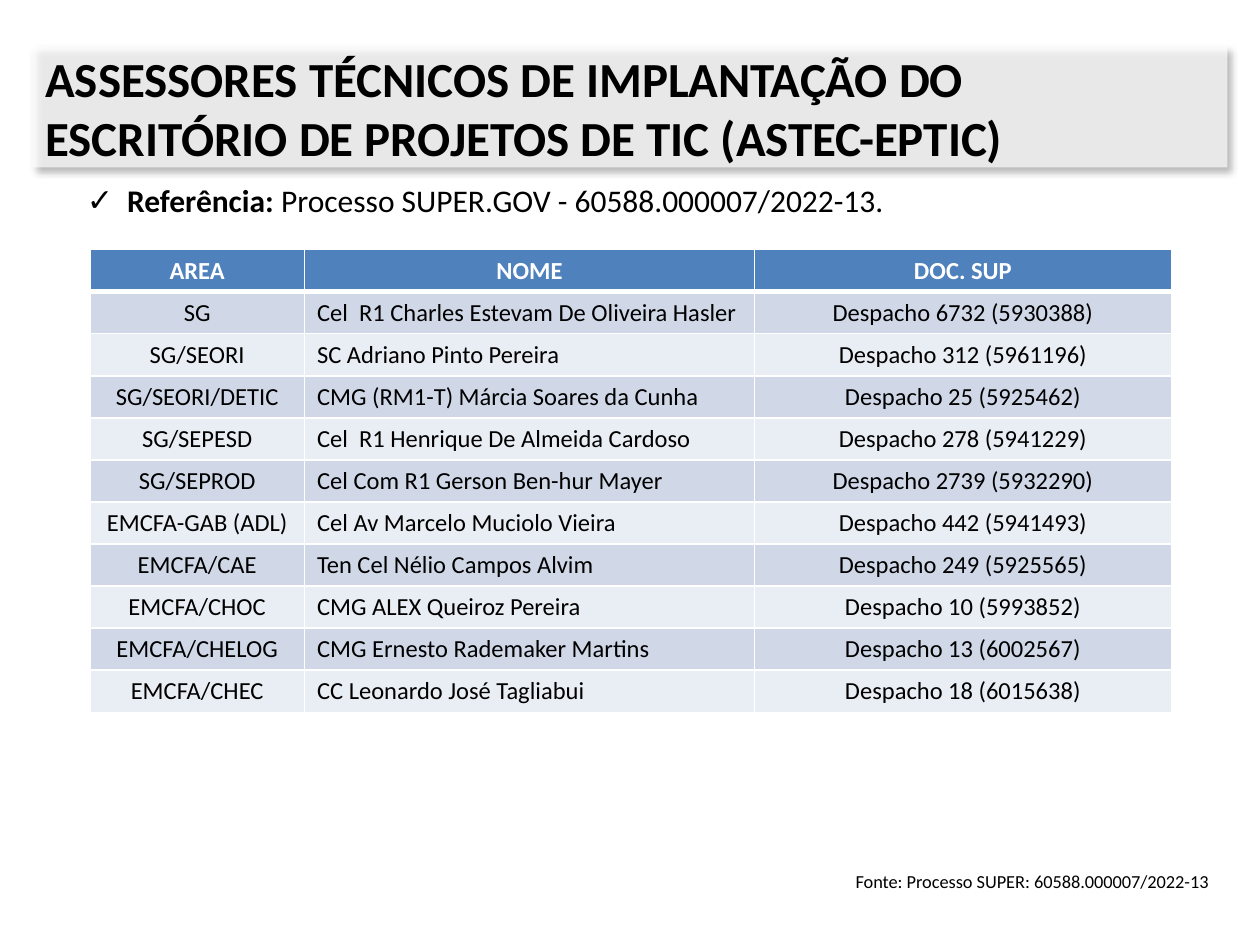
"""Builds the slide listing the technical advisers of the ICT project office."""
from typing import NamedTuple

from lxml import etree
from pptx import Presentation
from pptx.dml.color import RGBColor
from pptx.enum import shapes, text
from pptx.oxml import ns
from pptx.util import Pt

FONT = "Calibri"
BLACK = RGBColor(0x00, 0x00, 0x00)
WHITE = RGBColor(0xFF, 0xFF, 0xFF)
HEADER_BLUE = RGBColor(0x4F, 0x81, 0xBD)
BAND_DARK = RGBColor(0xD0, 0xD8, 0xE8)
BAND_LIGHT = RGBColor(0xE9, 0xED, 0xF4)

CENTER = text.PP_ALIGN.CENTER
LEFT = text.PP_ALIGN.LEFT
JUSTIFY = text.PP_ALIGN.JUSTIFY


class Area(NamedTuple):
    left: float
    top: float
    width: float
    height: float


class Adviser(NamedTuple):
    area: str
    name: str
    document: str


TITLE_AREA = Area(18.7, 26.6, 682.6, 69.1)
REFERENCE_AREA = Area(42.5, 100, 669, 29)
TABLE_AREA = Area(51.4, 142.6, 618, 264.55)
SOURCE_AREA = Area(445.7, 494, 255.6, 20)
COLUMN_WIDTHS = (122.6, 257.2, 238.2)
COLUMN_ALIGNMENTS = (CENTER, LEFT, CENTER)

HEADINGS = Adviser("AREA", "NOME", "DOC. SUP")
ADVISERS = (
    Adviser("SG", "Cel  R1 Charles Estevam De Oliveira Hasler", "Despacho 6732 (5930388)"),
    Adviser("SG/SEORI", "SC Adriano Pinto Pereira", "Despacho 312 (5961196)"),
    Adviser("SG/SEORI/DETIC", "CMG (RM1-T) Márcia Soares da Cunha", "Despacho 25 (5925462)"),
    Adviser("SG/SEPESD", "Cel  R1 Henrique De Almeida Cardoso", "Despacho 278 (5941229)"),
    Adviser("SG/SEPROD", "Cel Com R1 Gerson Ben-hur Mayer", "Despacho 2739 (5932290)"),
    Adviser("EMCFA-GAB (ADL)", "Cel Av Marcelo Muciolo Vieira", "Despacho 442 (5941493)"),
    Adviser("EMCFA/CAE", "Ten Cel Nélio Campos Alvim", "Despacho 249 (5925565)"),
    Adviser("EMCFA/CHOC", "CMG ALEX Queiroz Pereira", "Despacho 10 (5993852)"),
    Adviser("EMCFA/CHELOG", "CMG Ernesto Rademaker Martins", "Despacho 13 (6002567)"),
    Adviser("EMCFA/CHEC", "CC Leonardo José Tagliabui", "Despacho 18 (6015638)"),
)


def add_xml(parent, tag: str, **attributes: str):
    return etree.SubElement(parent, ns.qn(tag), attributes)


def in_points(area: Area) -> tuple:
    return tuple(Pt(length) for length in area)


def place(shape, area: Area) -> None:
    shape.left, shape.top, shape.width, shape.height = in_points(area)


def add_span(para, words: str, size: float, bold: bool = False, color: RGBColor = BLACK) -> None:
    span = para.add_run()
    span.text = words
    span.font.name = FONT
    span.font.size = Pt(size)
    span.font.bold = bold
    span.font.color.rgb = color


def add_title(page) -> None:
    title = page.shapes.title
    place(title, TITLE_AREA)
    frame = title.text_frame
    frame.auto_size = text.MSO_AUTO_SIZE.NONE
    frame.vertical_anchor = text.MSO_ANCHOR.MIDDLE
    frame.margin_top = frame.margin_bottom = 0
    para = frame.paragraphs[0]
    para.alignment = LEFT
    words = "ASSESSORES TÉCNICOS DE IMPLANTAÇÃO DO ESCRITÓRIO DE PROJETOS DE TIC (ASTEC-EPTIC)"
    add_span(para, words, 28, bold=True)


def add_title_panel(page) -> None:
    kind = shapes.MSO_SHAPE.ROUND_2_DIAG_RECTANGLE
    panel = page.shapes.add_shape(kind, *in_points(TITLE_AREA))
    for corner in range(2):
        panel.adjustments[corner] = 0
    panel.fill.solid()
    panel.fill.fore_color.rgb = WHITE
    panel.line.fill.background()
    panel.shadow.inherit = False
    fill_color = panel.element.xpath("./p:spPr/a:solidFill/a:srgbClr")[0]
    add_xml(fill_color, "a:alpha", val="68000")
    effects = panel.element.xpath("./p:spPr/a:effectLst")[0]
    shadow = add_xml(effects, "a:outerShdw", blurRad=str(Pt(4)), dist=str(Pt(3)),
                     dir="2700000", algn="tl", rotWithShape="0")
    shadow_color = add_xml(shadow, "a:srgbClr", val=str(BLACK))
    add_xml(shadow_color, "a:alpha", val="40000")
    page.shapes.title.element.addprevious(panel.element)


def add_reference(page) -> None:
    body = page.placeholders[1]
    place(body, REFERENCE_AREA)
    frame = body.text_frame
    frame.auto_size = text.MSO_AUTO_SIZE.NONE
    para = frame.paragraphs[0]
    para.alignment = JUSTIFY
    para.space_before = Pt(0)
    properties = para._p.get_or_add_pPr()
    properties.set("marL", str(Pt(22.9)))
    properties.set("indent", str(-Pt(22.9)))
    add_xml(properties, "a:buChar", char="✓")
    add_span(para, "Referência: ", 18, bold=True)
    add_span(para, "Processo SUPER.GOV - 60588.000007/2022-13.", 18)


def set_border(cell, side: str, width: float) -> None:
    line = add_xml(cell._tc.get_or_add_tcPr(), f"a:{side}", w=str(Pt(width)))
    add_xml(add_xml(line, "a:solidFill"), "a:srgbClr", val=str(WHITE))


def fill_cell(cell, words: str, alignment, background: RGBColor, header: bool, below_header: bool) -> None:
    set_border(cell, "lnL", 1)
    set_border(cell, "lnR", 1)
    set_border(cell, "lnT", 3 if below_header else 1)
    set_border(cell, "lnB", 3 if header else 1)
    cell.fill.solid()
    cell.fill.fore_color.rgb = background
    cell.vertical_anchor = text.MSO_ANCHOR.MIDDLE
    cell.margin_top = cell.margin_bottom = Pt(3)
    para = cell.text_frame.paragraphs[0]
    para.alignment = CENTER if header else alignment
    add_span(para, words, 14, bold=header, color=WHITE if header else BLACK)


def add_adviser_table(page) -> None:
    rows = (HEADINGS, *ADVISERS)
    table = page.shapes.add_table(len(rows), len(COLUMN_WIDTHS), *in_points(TABLE_AREA)).table
    for column, width in zip(table.columns, COLUMN_WIDTHS):
        column.width = Pt(width)
    for index, adviser in enumerate(rows):
        table.rows[index].height = Pt(TABLE_AREA.height / len(rows))
        header = index == 0
        background = HEADER_BLUE if header else BAND_DARK if index % 2 else BAND_LIGHT
        for position, (words, alignment) in enumerate(zip(adviser, COLUMN_ALIGNMENTS)):
            fill_cell(table.cell(index, position), words, alignment, background, header, index == 1)


def add_source(page) -> None:
    box = page.shapes.add_textbox(*in_points(SOURCE_AREA))
    frame = box.text_frame
    frame.word_wrap = True
    frame.margin_left = Pt(43.2)
    para = frame.paragraphs[0]
    para.alignment = JUSTIFY
    add_span(para, "Fonte: Processo SUPER: 60588.000007/2022-13", 10.5)


def main() -> None:
    deck = Presentation()
    deck.slide_width, deck.slide_height = Pt(720), Pt(540)
    page = deck.slides.add_slide(deck.slide_layouts[1])
    add_title(page)
    add_title_panel(page)
    add_reference(page)
    add_adviser_table(page)
    add_source(page)
    deck.save("out.pptx")


if __name__ == "__main__":
    main()
